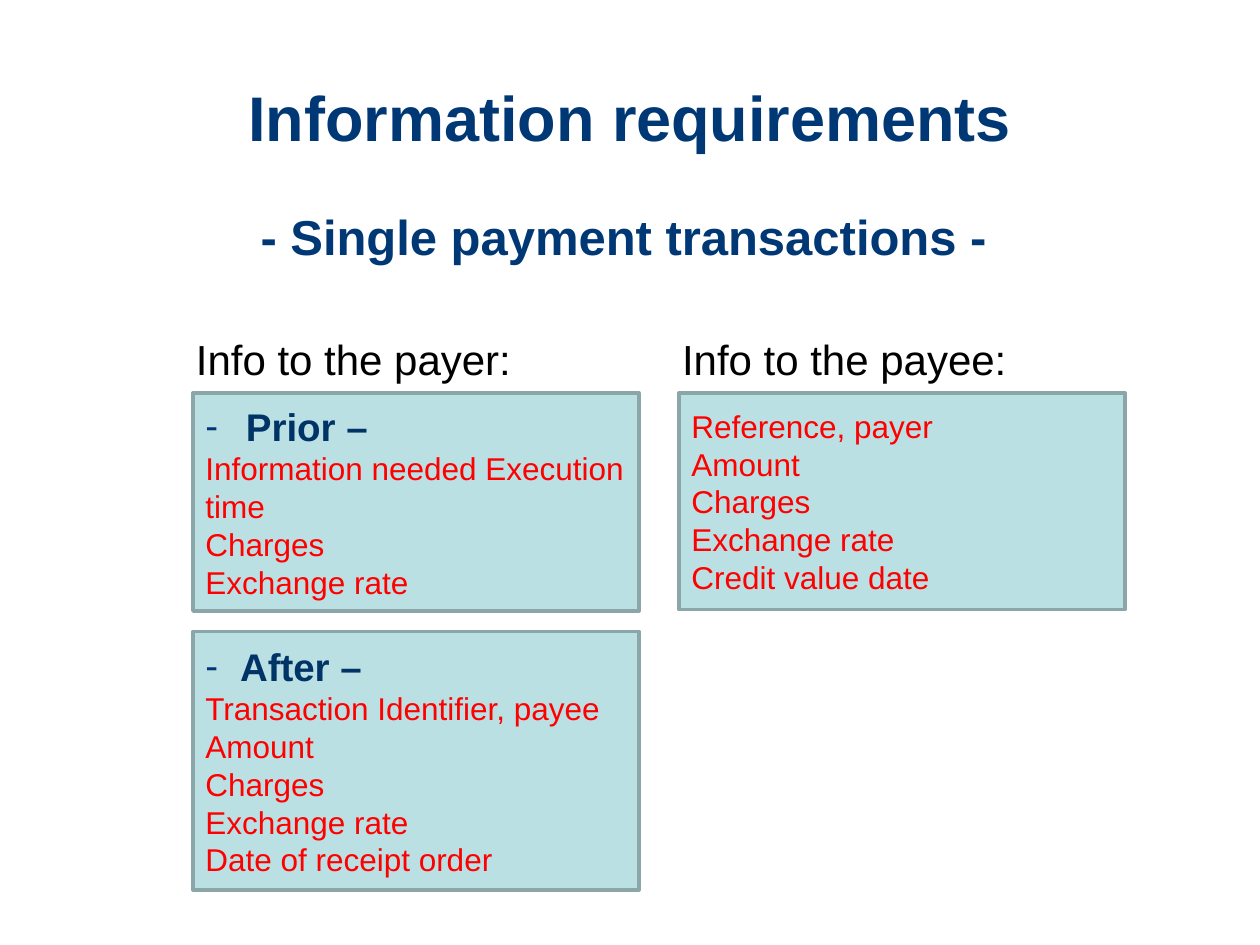
"""Build the slide on information requirements for single payment transactions."""
from dataclasses import dataclass

from lxml.etree import SubElement
from pptx import Presentation
from pptx.dml.color import RGBColor as Rgb
from pptx.enum.shapes import MSO_SHAPE as Preset
from pptx.enum.text import MSO_ANCHOR as Anchor, PP_ALIGN as Align
from pptx.oxml.ns import qn
from pptx.slide import Slide
from pptx.util import Cm, Pt


@dataclass(frozen=True)
class Theme:
    font: str = "Arial"
    navy: str = "003876"
    heading: str = "003366"
    item: str = "FF0000"
    label: str = "000000"
    panel: str = "BBE0E3"
    border: str = "8AA6A8"
    title_size: int = 36
    subtitle_size: int = 28
    label_size: int = 24
    heading_size: int = 22
    item_size: int = 18


@dataclass(frozen=True)
class Caption:
    text: str
    left: float
    top: float
    width: float
    height: float
    size: int
    color: str
    bold: bool = False
    align: Align = Align.LEFT
    anchor: Anchor = Anchor.TOP


@dataclass(frozen=True)
class Panel:
    left: float
    top: float
    height: float
    items: tuple[str, ...]
    heading: str = ""
    indent: float = 0


THEME = Theme()
PAYER_LEFT, PAYEE_LEFT = 3.89, 13.69
PANEL_TOP, PANEL_WIDTH = 7.92, 8.99
LABEL_TOP, LABEL_SHIFT = 6.6, 0.19

CAPTIONS = (
    Caption("Information requirements", 1.27, 0.76, 22.86, 3.18,
            THEME.title_size, THEME.navy, True, Align.CENTER, Anchor.MIDDLE),
    Caption("- Single payment transactions -", 1.14, 4.04, 22.86, 1.68,
            THEME.subtitle_size, THEME.navy, True, Align.CENTER),
    *(Caption(text, left - LABEL_SHIFT, LABEL_TOP, 9.2, 1.68,
              THEME.label_size, THEME.label)
      for text, left in (("Info to the payer:", PAYER_LEFT),
                         ("Info to the payee:", PAYEE_LEFT))),
)

PANELS = (
    Panel(PAYEE_LEFT, PANEL_TOP, 4.37,
          ("Reference, payer", "Amount", "Charges", "Exchange rate",
           "Credit value date")),
    Panel(PAYER_LEFT, 12.73, 5.21,
          ("Transaction Identifier, payee", "Amount", "Charges",
           "Exchange rate", "Date of receipt order"), "After –", 0.7),
    Panel(PAYER_LEFT, PANEL_TOP, 4.4,
          ("Information needed Execution time", "Charges", "Exchange rate"),
          "Prior –", 0.82),
)


def style(paragraph, size: int, color: str, bold: bool = False) -> None:
    """Format every run of a paragraph."""
    for run in paragraph.runs:
        run.font.name = THEME.font
        run.font.size = Pt(size)
        run.font.bold = bold
        run.font.color.rgb = Rgb.from_string(color)


def add_dash(paragraph, indent: float) -> None:
    """Give a paragraph a hanging navy dash as its bullet."""
    properties = paragraph._p.get_or_add_pPr()
    properties.set("marL", str(Cm(indent)))
    properties.set("indent", str(-Cm(indent)))
    bullet_color = SubElement(properties, qn("a:buClr"))
    SubElement(bullet_color, qn("a:srgbClr"), val=THEME.navy)
    SubElement(properties, qn("a:buFont"), typeface=THEME.font)
    SubElement(properties, qn("a:buChar"), char="-")


def draw_caption(slide: Slide, caption: Caption) -> None:
    """Draw a title, subtitle or column label."""
    box = slide.shapes.add_textbox(Cm(caption.left), Cm(caption.top),
                                   Cm(caption.width), Cm(caption.height))
    frame = box.text_frame
    frame.word_wrap = True
    frame.vertical_anchor = caption.anchor
    frame.text = caption.text
    paragraph = frame.paragraphs[0]
    paragraph.alignment = caption.align
    style(paragraph, caption.size, caption.color, caption.bold)


def draw_panel(slide: Slide, panel: Panel) -> None:
    """Draw a bordered panel with its optional heading and its items."""
    box = slide.shapes.add_shape(Preset.RECTANGLE, Cm(panel.left), Cm(panel.top),
                                 Cm(PANEL_WIDTH), Cm(panel.height))
    box.shadow.inherit = False
    box.fill.solid()
    box.fill.fore_color.rgb = Rgb.from_string(THEME.panel)
    box.line.color.rgb = Rgb.from_string(THEME.border)
    box.line.width = Pt(2)
    frame = box.text_frame
    frame.word_wrap = True
    frame.vertical_anchor = Anchor.MIDDLE
    heading = (panel.heading,) if panel.heading else ()
    frame.text = "\n".join(heading + panel.items)
    for paragraph in frame.paragraphs:
        paragraph.alignment = Align.LEFT
        style(paragraph, THEME.item_size, THEME.item)
    if heading:
        first = frame.paragraphs[0]
        add_dash(first, panel.indent)
        style(first, THEME.heading_size, THEME.heading, True)


def main() -> None:
    """Assemble and save the slide."""
    deck = Presentation()
    deck.slide_width, deck.slide_height = Cm(25.4), Cm(19.05)
    slide = deck.slides.add_slide(deck.slide_layouts[6])
    for panel in PANELS:
        draw_panel(slide, panel)
    for caption in CAPTIONS:
        draw_caption(slide, caption)
    deck.save("out.pptx")


if __name__ == "__main__":
    main()
